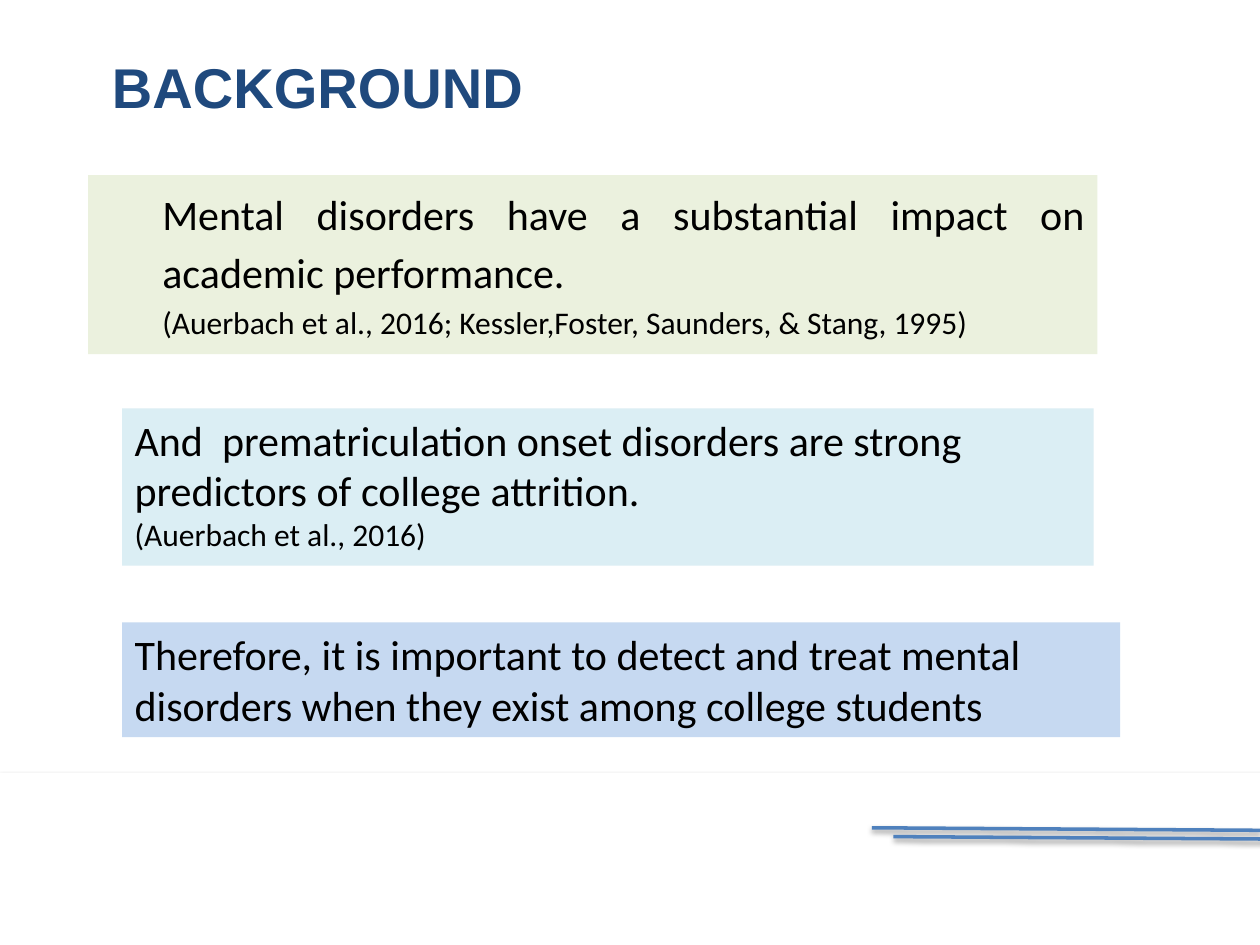
from lxml.etree import SubElement
from pptx import Presentation
from pptx.dml.color import RGBColor
from pptx.enum.shapes import MSO_CONNECTOR, MSO_SHAPE
from pptx.enum.text import MSO_ANCHOR, PP_ALIGN
from pptx.oxml.ns import qn
from pptx.util import Inches, Pt

COLORS = {
    "white": "FFFFFF", "black": "000000", "title": "1F497D", "rule": "4F81BD",
    "green": "EBF1DE", "aqua": "DBEEF4", "blue": "C6D9F1",
}

# Content
TITLE = "BACKGROUND"
# Each statement: box, fill, text, citation, justified and indented
STATEMENTS = [
    ((0.7, 1.39, 8.01, 1.42), "green",
     "Mental disorders have a substantial impact on academic performance.",
     "(Auerbach et al., 2016; Kessler,Foster, Saunders, & Stang, 1995)", True),
    ((0.97, 3.24, 7.71, 1.25), "aqua",
     "And  prematriculation onset disorders are strong predictors of college attrition.",
     "(Auerbach et al., 2016)", False),
    ((0.97, 4.94, 7.92, 0.91), "blue",
     "Therefore, it is important to detect and treat mental disorders "
     "when they exist among college students", None, False),
]
RULES = [(6.92, 6.57), (7.09, 6.64)]
RULE_RUN, RULE_DROP = 3.08, 0.02


def rgb(name):
    return RGBColor.from_string(COLORS[name])


def style(p, size, font, color, bold=False):
    f = p.runs[0].font
    f.size, f.name, f.bold = Pt(size), font, bold
    f.color.rgb = rgb(color)


def add_shadow(shape, blur, dist, alpha):
    """Cast a soft black shadow straight down."""
    spPr = shape._element.spPr
    effects = spPr.find(qn("a:effectLst"))
    if effects is None:
        effects = SubElement(spPr, qn("a:effectLst"))
    shadow = SubElement(effects, qn("a:outerShdw"), blurRad=str(Pt(blur)),
                        dist=str(Pt(dist)), dir="5400000", rotWithShape="0")
    color = SubElement(shadow, qn("a:srgbClr"), val=COLORS["black"])
    SubElement(color, qn("a:alpha"), val=str(alpha * 1000))


def add_box(s, box, fill):
    sp = s.shapes.add_shape(MSO_SHAPE.RECTANGLE, *map(Inches, box))
    sp.shadow.inherit = False
    sp.fill.solid()
    sp.fill.fore_color.rgb = rgb(fill)
    sp.line.fill.background()
    return sp


def add_statement(s, box, fill, text, citation, justified):
    tf = add_box(s, box, fill).text_frame
    tf.word_wrap = True
    tf.vertical_anchor = MSO_ANCHOR.TOP
    tf.text = "\n".join(filter(None, (text, citation)))
    for p, size in zip(tf.paragraphs, (24, 18)):
        p.alignment = PP_ALIGN.JUSTIFY if justified else PP_ALIGN.LEFT
        if justified:
            p.line_spacing = 1.15
            p._p.get_or_add_pPr().set("marL", str(Inches(0.49)))
        style(p, size, "Calibri", "black")


def main():
    prs = Presentation()
    prs.slide_width, prs.slide_height = Inches(10), Inches(7.5)
    s = prs.slides.add_slide(prs.slide_layouts[6])

    # Footer panel
    panel = add_box(s, (0, 6.14, 10, 1.36), "white")
    panel.line.color.rgb = rgb("white")
    panel.line.width = Pt(0.75)
    add_shadow(panel, 3.1, 1.8, 35)

    # Footer rules
    for x, y in RULES:
        rule = s.shapes.add_connector(
            MSO_CONNECTOR.STRAIGHT, Inches(x), Inches(y),
            Inches(x + RULE_RUN), Inches(y + RULE_DROP))
        rule.line.color.rgb = rgb("rule")
        rule.line.width = Pt(2)
        add_shadow(rule, 3.1, 1.6, 38)

    # Statements
    for statement in STATEMENTS:
        add_statement(s, *statement)

    # Title
    title = s.shapes.add_textbox(*map(Inches, (0.79, 0.37, 3.49, 0.64)))
    tf = title.text_frame
    tf.word_wrap = False
    tf.text = TITLE
    style(tf.paragraphs[0], 32, "Arial", "title", bold=True)

    prs.save("out.pptx")


if __name__ == "__main__":
    main()
